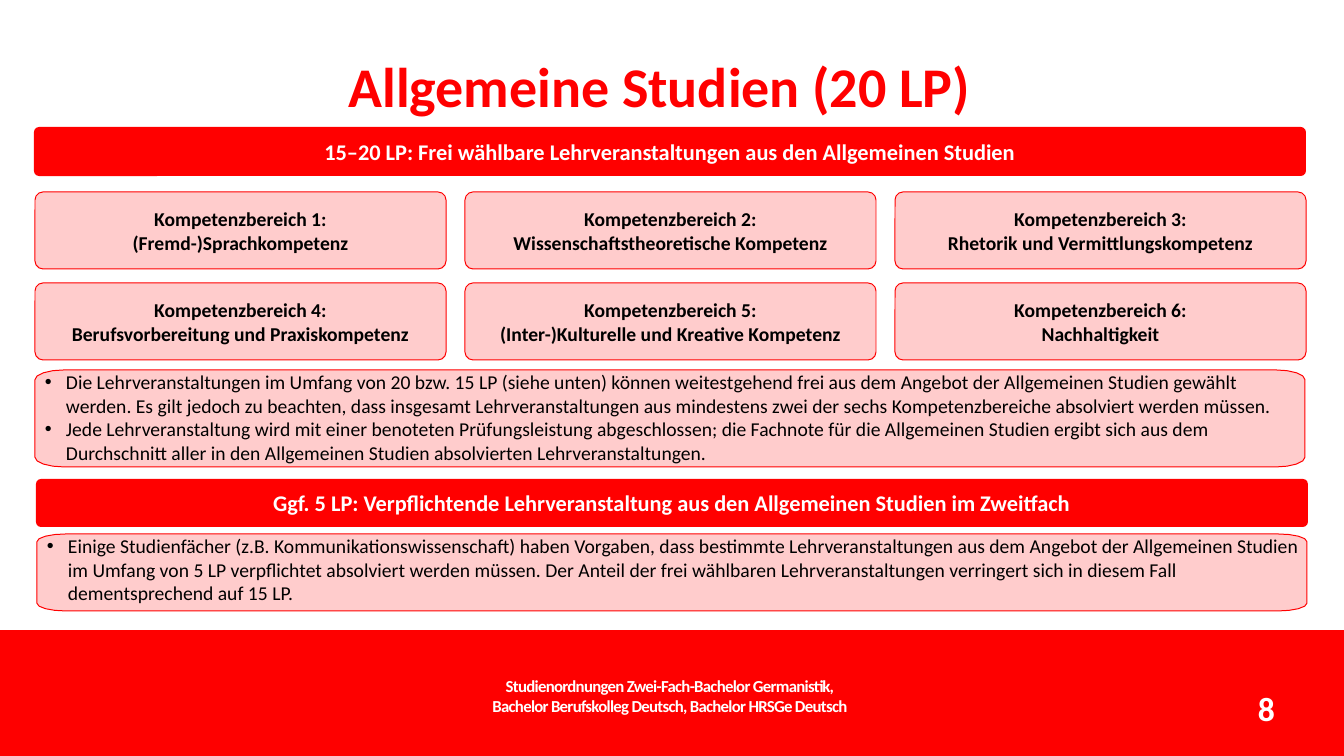
import math
from lxml import etree
from pptx import Presentation
from pptx.dml.color import RGBColor
from pptx.enum.shapes import MSO_SHAPE
from pptx.enum.text import MSO_ANCHOR, MSO_AUTO_SIZE, PP_ALIGN
from pptx.oxml.ns import qn
from pptx.util import Pt

PX = 914400 / 100.8
RECTANGLE, ROUNDED = MSO_SHAPE.RECTANGLE, MSO_SHAPE.ROUNDED_RECTANGLE
TOP, MIDDLE = MSO_ANCHOR.TOP, MSO_ANCHOR.MIDDLE
LEFT, CENTER, RIGHT = PP_ALIGN.LEFT, PP_ALIGN.CENTER, PP_ALIGN.RIGHT
NO_AUTOFIT = MSO_AUTO_SIZE.NONE
FONT = "Calibri"
COLORS = {"red": "FF0000", "bar": "FE0000", "pink": "FFCCCC", "white": "FFFFFF", "black": "000000"}

TITLE = "Allgemeine Studien (20 LP)"
TITLE_BOX = (101, 52, 1110, 70)
TITLE_INDENT = 7
BAR = (0, 630, 1344, 126)
FOOTER = "Studienordnungen Zwei-Fach-Bachelor Germanistik,\vBachelor Berufskolleg Deutsch, Bachelor HRSGe Deutsch"
FOOTER_BOX = (470, 676, 400, 39)
PAGE_NUMBER = "8"
PAGE_NUMBER_BOX = (966, 688, 309, 40)

BANNERS = [
    ((34, 127, 1272, 49), "15–20 LP: Frei wählbare Lehrveranstaltungen aus den Allgemeinen Studien"),
    ((36, 479, 1272, 48), "Ggf. 5 LP: Verpflichtende Lehrveranstaltung aus den Allgemeinen Studien im Zweitfach"),
]
BANNER_RADIUS = 5

AREAS = [
    "(Fremd-)Sprachkompetenz",
    "Wissenschaftstheoretische Kompetenz",
    "Rhetorik und Vermittlungskompetenz",
    "Berufsvorbereitung und Praxiskompetenz",
    "(Inter-)Kulturelle und Kreative Kompetenz",
    "Nachhaltigkeit",
]
GRID_LEFT, GRID_TOP, COLUMN_STEP, ROW_STEP = 35, 192, 430, 91
AREA_WIDTH, AREA_HEIGHT, AREA_RADIUS, COLUMNS = 411, 77, 8, 3

NOTES = [
    ((35, 370, 1270, 97), [
        "Die Lehrveranstaltungen im Umfang von 20 bzw. 15 LP (siehe unten) können weitestgehend frei aus dem Angebot der Allgemeinen Studien gewählt werden. Es gilt jedoch zu beachten, dass insgesamt Lehrveranstaltungen aus mindestens zwei der sechs Kompetenzbereiche absolviert werden müssen.",
        "Jede Lehrveranstaltung wird mit einer benoteten Prüfungsleistung abgeschlossen; die Fachnote für die Allgemeinen Studien ergibt sich aus dem Durchschnitt aller in den Allgemeinen Studien absolvierten Lehrveranstaltungen.",
    ]),
    ((37, 534, 1270, 77), [
        "Einige Studienfächer (z.B. Kommunikationswissenschaft) haben Vorgaben, dass bestimmte Lehrveranstaltungen aus dem Angebot der Allgemeinen Studien im Umfang von 5 LP verpflichtet absolviert werden müssen. Der Anteil der frei wählbaren Lehrveranstaltungen verringert sich in diesem Fall dementsprechend auf 15 LP.",
    ]),
]
NOTE_CORNER_WIDTH, NOTE_CORNER_SHARE, CORNER_STEPS = 29, 0.1, 4
BULLET_MARGIN, BULLET_HANG = 31, -21


def emu(*lengths):
    return [round(length * PX) for length in lengths]


def rgb(name):
    return RGBColor.from_string(COLORS[name])


def paint(shape, fill, line=None):
    shape.shadow.inherit = False
    shape.fill.solid()
    shape.fill.fore_color.rgb = rgb(fill)
    if line:
        shape.line.color.rgb = rgb(line)
        shape.line.width = Pt(0.72)
    else:
        shape.line.fill.background()


def write(shape, text, size, color, bold=True, align=CENTER, anchor=TOP, bullet=False, spacing=None):
    frame = shape.text_frame
    frame.text = text
    frame.word_wrap = True
    frame.auto_size = NO_AUTOFIT
    frame.vertical_anchor = anchor
    frame.margin_left = frame.margin_top = frame.margin_right = frame.margin_bottom = 0
    for paragraph in frame.paragraphs:
        paragraph.alignment = align
        if bullet:
            margin, hang = emu(BULLET_MARGIN, BULLET_HANG)
            properties = paragraph._p.get_or_add_pPr()
            properties.set("marL", str(margin))
            properties.set("indent", str(hang))
            etree.SubElement(properties, qn("a:buFont")).set("typeface", "Arial")
            etree.SubElement(properties, qn("a:buChar")).set("char", "•")
        for run in paragraph.runs:
            run.font.name = FONT
            run.font.size = Pt(size)
            run.font.bold = bold
            run.font.color.rgb = rgb(color)
            if spacing is not None:
                run._r.get_or_add_rPr().set("spc", str(spacing))


def add_rounded(slide, box, radius, fill, line=None):
    shape = slide.shapes.add_shape(ROUNDED, *emu(*box))
    shape.adjustments[0] = radius / min(box[2:])
    paint(shape, fill, line)
    return shape


def add_note_shape(slide, box):
    left, top, width, height = box
    corner_x, corner_y = NOTE_CORNER_WIDTH, height * NOTE_CORNER_SHARE
    right_center, left_center = left + width - corner_x, left + corner_x
    bottom_center, top_center = top + height - corner_y, top + corner_y
    centers = [(right_center, bottom_center), (left_center, bottom_center),
               (left_center, top_center), (right_center, top_center)]
    points = []
    for quarter, (x, y) in enumerate(centers):
        for step in range(CORNER_STEPS + 1):
            angle = (quarter + step / CORNER_STEPS) * math.pi / 2
            points.append(emu(x + corner_x * math.cos(angle), y + corner_y * math.sin(angle)))
    builder = slide.shapes.build_freeform(*points[0])
    builder.add_line_segments(points[1:], close=True)
    shape = builder.convert_to_shape()
    paint(shape, "pink", "red")
    return shape


def main():
    presentation = Presentation()
    presentation.slide_width, presentation.slide_height = emu(1344, 756)
    slide = presentation.slides.add_slide(presentation.slide_layouts[5])

    title = slide.shapes.title
    title.left, title.top, title.width, title.height = emu(*TITLE_BOX)
    write(title, TITLE, 40, "red")
    title.text_frame.margin_left = emu(TITLE_INDENT)[0]

    bar = slide.shapes.add_shape(RECTANGLE, *emu(*BAR))
    paint(bar, "bar")
    footer = slide.shapes.add_textbox(*emu(*FOOTER_BOX))
    write(footer, FOOTER, 12, "white", spacing=-50)
    footer.text_frame.paragraphs[0].line_spacing = Pt(14.2)
    page_number = slide.shapes.add_textbox(*emu(*PAGE_NUMBER_BOX))
    write(page_number, PAGE_NUMBER, 24, "white", align=RIGHT)

    for box, text in BANNERS:
        banner = add_rounded(slide, box, BANNER_RADIUS, "red")
        write(banner, text, 16, "white", anchor=MIDDLE)

    for index, area in enumerate(AREAS):
        row, column = divmod(index, COLUMNS)
        box = (GRID_LEFT + column * COLUMN_STEP, GRID_TOP + row * ROW_STEP, AREA_WIDTH, AREA_HEIGHT)
        card = add_rounded(slide, box, AREA_RADIUS, "pink", "red")
        write(card, f"Kompetenzbereich {index + 1}:\v{area}", 14, "black", anchor=MIDDLE)

    for box, points in NOTES:
        note = add_note_shape(slide, box)
        write(note, "\n".join(points), 14, "black", bold=False, align=LEFT, bullet=True)

    presentation.save("out.pptx")


if __name__ == "__main__":
    main()
